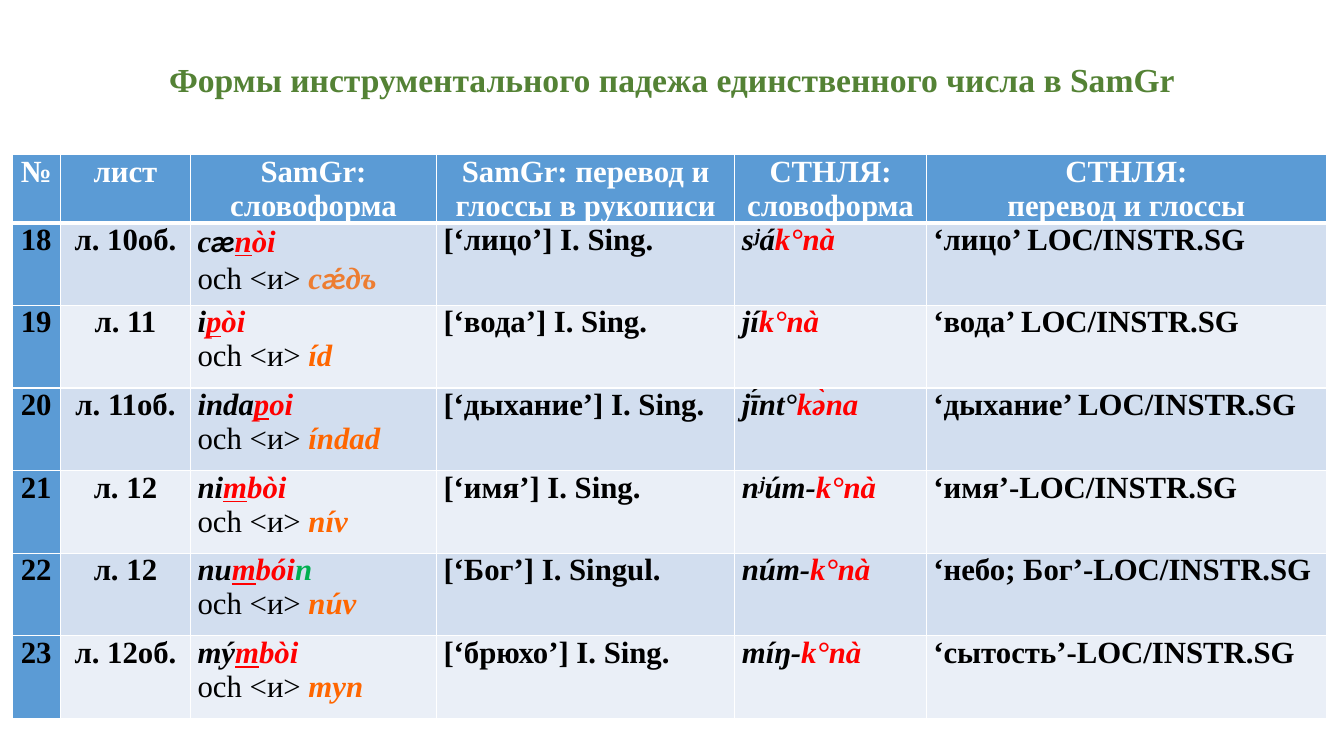
import itertools

import lxml.etree
import pptx
import pptx.dml.color
import pptx.enum.text
import pptx.oxml.ns
import pptx.util

Pt = pptx.util.Pt
CENTER = pptx.enum.text.PP_ALIGN.CENTER
LEFT = pptx.enum.text.PP_ALIGN.LEFT

COLORS = {
    "title": "548235", "white": "FFFFFF", "black": "000000",
    "header": "5B9BD5", "odd_band": "D2DEEF", "even_band": "EAEFF7",
    "red": "FF0000", "green": "00B050", "orange": "FF6600",
    "soft_orange": "ED7D31",
}
SERIF = "Times New Roman"
LIGATURES = "æǽ"  # set in Calibri

# style: colour, bold, italic, underline
STYLES = {
    "header": ("white", True, False, False),
    "plain": ("black", True, False, False),
    "och": ("black", False, False, False),
    "stem": ("black", True, True, False),
    "suffix_start": ("red", True, True, True),
    "suffix": ("red", True, True, False),
    "final": ("green", True, True, False),
    "pair": ("orange", True, True, False),
    "soft_pair": ("soft_orange", True, True, False),
}

COLUMN_WIDTHS = [34.6, 92.9, 175.7, 213.1, 136.8, 285.8]
HEADER_HEIGHT, ROW_HEIGHT = 48, 59
HEADINGS = [
    ["№"], ["лист"], ["SamGr:", "cловоформа"],
    ["SamGr: перевод и глоссы в рукописи"],
    ["СТНЛЯ:", "cловоформа"], ["СТНЛЯ:", "перевод и глоссы"],
]

# number, sheet, word form, paired form, manuscript gloss,
# dictionary stem, dictionary suffix, dictionary gloss
ENTRIES = [
    ("18", "л. 10об.",
     [("сæ", "stem"), ("п", "suffix_start"), ("òi", "suffix")],
     ("сǽдъ", "soft_pair"), "[‘лицо’] I. Sing.",
     "sʲá", "k°nà", "‘лицо’ LOC/INSTR.SG"),
    ("19", "л. 11",
     [("i", "stem"), ("p", "suffix_start"), ("òi", "suffix")],
     ("íd", "pair"), "[‘вода’] I. Sing.",
     "jí", "k°nà", "‘вода’ LOC/INSTR.SG"),
    ("20", "л. 11об.",
     [("inda", "stem"), ("p", "suffix_start"), ("oi", "suffix")],
     ("índad", "pair"), "[‘дыхание’] I. Sing.",
     "jī́nt°", "kə̀na", "‘дыхание’ LOC/INSTR.SG"),
    ("21", "л. 12",
     [("ni", "stem"), ("m", "suffix_start"), ("bòi", "suffix")],
     ("nív", "pair"), "[‘имя’] I. Sing.",
     "nʲúm-", "k°nà", "‘имя’-LOC/INSTR.SG"),
    ("22", "л. 12",
     [("nu", "stem"), ("m", "suffix_start"), ("bói", "suffix"), ("n", "final")],
     ("núv", "pair"), "[‘Бог’] I. Singul.",
     "núm-", "k°nà", "‘небо; Бог’-LOC/INSTR.SG"),
    ("23", "л. 12об.",
     [("mý", "stem"), ("m", "suffix_start"), ("bòi", "suffix")],
     ("myn", "pair"), "[‘брюхо’] I. Sing.",
     "míŋ-", "k°nà", "‘сытость’-LOC/INSTR.SG"),
]


def rgb(name):
    return pptx.dml.color.RGBColor.from_string(COLORS[name])


def add_styled_text(paragraph, text, style):
    """Add text to a paragraph, giving the ligatures their own font."""
    color, bold, italic, underline = STYLES[style]
    for is_ligature, letters in itertools.groupby(text, lambda c: c in LIGATURES):
        run = paragraph.add_run()
        run.text = "".join(letters)
        font = run.font
        font.name = "Calibri" if is_ligature else SERIF
        font.size = Pt(22)
        font.bold, font.italic, font.underline = bold, italic, underline
        font.color.rgb = rgb(color)


def add_border(cell, side, width):
    qn = pptx.oxml.ns.qn
    line = lxml.etree.SubElement(
        cell._tc.get_or_add_tcPr(), qn(f"a:ln{side}"), w=str(Pt(width)))
    fill = lxml.etree.SubElement(line, qn("a:solidFill"))
    lxml.etree.SubElement(fill, qn("a:srgbClr"), val=COLORS["white"])


def fill_cell(cell, lines, alignment, background, bottom_border=1, top_border=1):
    """Write lines, each a list of (text, style), into a bordered cell."""
    cell.margin_left = cell.margin_right = Pt(5.1)
    cell.margin_top = cell.margin_bottom = 0
    widths = {"L": 1, "R": 1, "T": top_border, "B": bottom_border}
    for side, width in widths.items():
        add_border(cell, side, width)
    cell.fill.solid()
    cell.fill.fore_color.rgb = rgb(background)
    for index, line in enumerate(lines):
        frame = cell.text_frame
        paragraph = frame.paragraphs[0] if index == 0 else frame.add_paragraph()
        paragraph.alignment = alignment
        for text, style in line:
            add_styled_text(paragraph, text, style)


def entry_cells(entry):
    """Return the lines of each cell in an entry's row."""
    number, sheet, form, pair, gloss, stem, suffix, meaning = entry
    return [
        [[(number, "plain")]],
        [[(sheet, "plain")]],
        [form, [("och <и> ", "och"), pair]],
        [[(gloss, "plain")]],
        [[(stem, "stem"), (suffix, "suffix")]],
        [[(meaning, "plain")]],
    ]


def add_forms_table(slide, left, top):
    height = HEADER_HEIGHT + ROW_HEIGHT * len(ENTRIES)
    table = slide.shapes.add_table(
        len(ENTRIES) + 1, len(HEADINGS), Pt(left), Pt(top),
        Pt(sum(COLUMN_WIDTHS)), Pt(height)).table
    for column, width in zip(table.columns, COLUMN_WIDTHS):
        column.width = Pt(width)
    table.rows[0].height = Pt(HEADER_HEIGHT)
    for column, heading in enumerate(HEADINGS):
        lines = [[(line, "header")] for line in heading]
        fill_cell(table.cell(0, column), lines, CENTER, "header", bottom_border=3)
    for row, entry in enumerate(ENTRIES, start=1):
        table.rows[row].height = Pt(ROW_HEIGHT)
        band = "odd_band" if row % 2 else "even_band"
        for column, lines in enumerate(entry_cells(entry)):
            fill_cell(table.cell(row, column), lines,
                      CENTER if column < 2 else LEFT,
                      "header" if column == 0 else band,
                      top_border=3 if row == 1 else 1)


def set_title(slide, left, top, width, height):
    title = slide.shapes.title
    title.left, title.top = Pt(left), Pt(top)
    title.width, title.height = Pt(width), Pt(height)
    frame = title.text_frame
    frame.text = "Формы инструментального падежа единственного числа в SamGr"
    frame.word_wrap = True
    frame.vertical_anchor = pptx.enum.text.MSO_ANCHOR.MIDDLE
    paragraph = frame.paragraphs[0]
    paragraph.alignment = CENTER
    paragraph.line_spacing = 0.9
    font = paragraph.runs[0].font
    font.name, font.size, font.bold = SERIF, Pt(24), True
    font.color.rgb = rgb("title")


def main():
    deck = pptx.Presentation()
    deck.slide_width, deck.slide_height = Pt(960), Pt(540)
    slide = deck.slides.add_slide(deck.slide_layouts[5])
    set_title(slide, 66, 16, 828, 84)
    add_forms_table(slide, 8.6, 110.5)
    deck.save("out.pptx")


if __name__ == "__main__":
    main()
